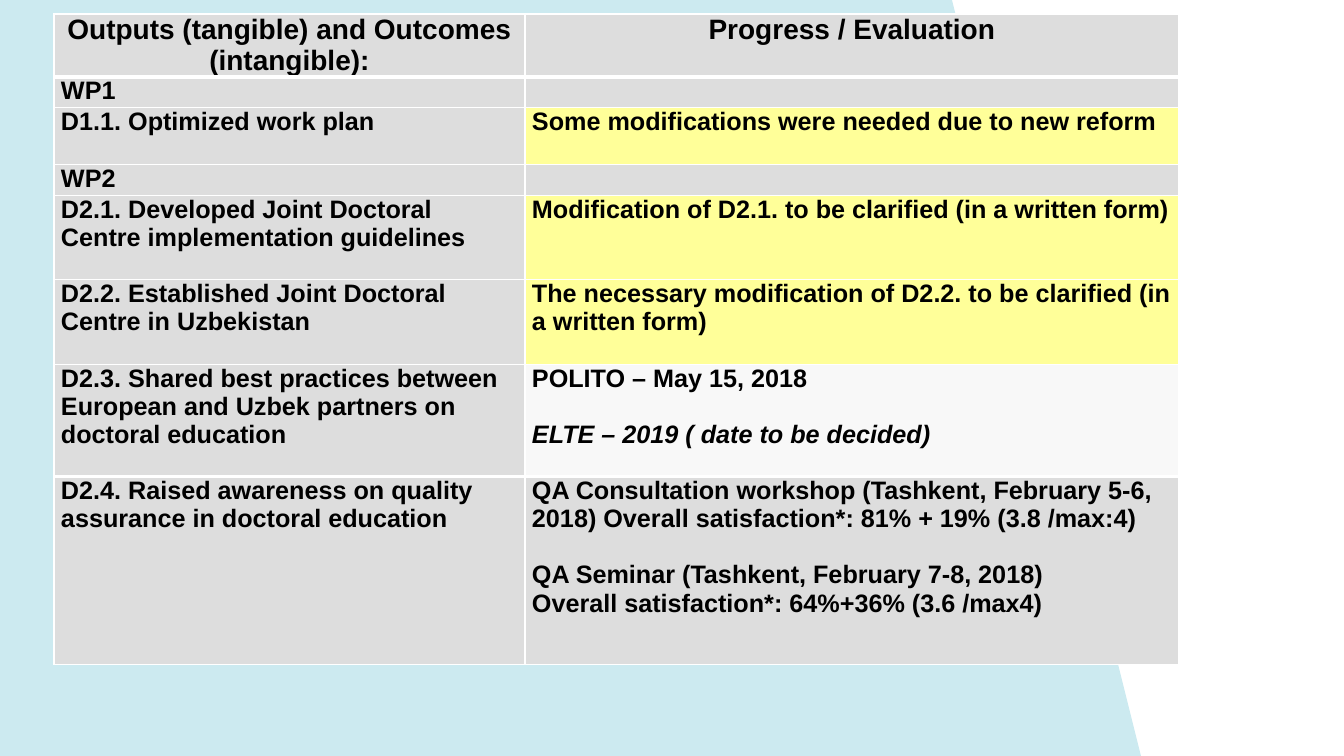
from dataclasses import dataclass

from lxml import etree
from pptx import Presentation
from pptx.dml.color import RGBColor
from pptx.enum.text import PP_ALIGN
from pptx.oxml.ns import qn
from pptx.util import Emu, Pt

PX_PER_INCH = 100.8
EMU_PER_PX = 914400 / PX_PER_INCH
CENTER, LEFT = PP_ALIGN.CENTER, PP_ALIGN.LEFT

BLACK = RGBColor(0x00, 0x00, 0x00)
WHITE = RGBColor(0xFF, 0xFF, 0xFF)
PALE_BLUE = RGBColor(0xCC, 0xEA, 0xF0)
GREY = RGBColor(0xDD, 0xDD, 0xDD)
LIGHT_GREY = RGBColor(0xF8, 0xF8, 0xF8)
YELLOW = RGBColor(0xFF, 0xFF, 0x99)

FONT = "Arial"
BLANK_LAYOUT = 6
COLUMN_WIDTHS = (471, 654)
CELL_INSET = 7
THIN, THICK = 1, 3


@dataclass(frozen=True)
class Line:
    text: str
    italic: bool = False
    space_before: int = 0


@dataclass(frozen=True)
class Row:
    height: int
    output: tuple[Line, ...]
    progress: tuple[Line, ...] = ()
    progress_fill: RGBColor = GREY
    top: int = THIN
    bottom: int = THIN
    size: int = 18
    align: PP_ALIGN = LEFT


ROWS = (
    Row(63, (Line("Outputs (tangible) and Outcomes"), Line("(intangible):")),
        (Line("Progress / Evaluation"),), bottom=THICK, size=20, align=CENTER),
    Row(28, (Line("WP1"),), top=THICK),
    Row(57, (Line("D1.1. Optimized work plan"),),
        (Line("Some modifications were needed due to new reform"),), YELLOW),
    Row(29, (Line("WP2"),)),
    Row(84, (Line("D2.1. Developed Joint Doctoral Centre implementation guidelines"),),
        (Line("Modification of D2.1. to be clarified (in a written form)"),), YELLOW),
    Row(85, (Line("D2.2. Established Joint Doctoral Centre in Uzbekistan"),),
        (Line("The necessary modification of D2.2. to be clarified (in a written form)"),), YELLOW),
    Row(112, (Line("D2.3. Shared best practices between European and Uzbek partners "
                   "on doctoral education"),),
        (Line("POLITO – May 15, 2018"),
         Line("ELTE – 2019 ( date to be decided)", italic=True, space_before=20)),
        LIGHT_GREY, bottom=THICK),
    Row(188, (Line("D2.4. Raised awareness on quality assurance in doctoral education"),),
        (Line("QA Consultation workshop (Tashkent, February 5-6, 2018) "
              "Overall satisfaction*: 81% + 19% (3.8 /max:4)"),
         Line("QA Seminar (Tashkent, February 7-8, 2018)", space_before=20),
         Line("Overall satisfaction*: 64%+36% (3.6 /max4)")), top=THICK),
)


def px(length: int) -> Emu:
    return Emu(round(length * EMU_PER_PX))


def write(p, text: str, *, size: int, italic: bool = False,
          align: PP_ALIGN = LEFT, space_before: int = 0) -> None:
    p.alignment = align
    if space_before:
        p.space_before = Pt(space_before)
    r = p.add_run()
    r.text = text
    font = r.font
    font.name, font.size, font.bold, font.italic = FONT, Pt(size), True, italic
    font.color.rgb = BLACK


def add_borders(cell, top: int, bottom: int) -> None:
    tc_pr = cell._tc.get_or_add_tcPr()
    for side, width in (("L", THIN), ("R", THIN), ("T", top), ("B", bottom)):
        ln = etree.SubElement(tc_pr, qn(f"a:ln{side}"), w=str(Pt(width)))
        fill = etree.SubElement(ln, qn("a:solidFill"))
        etree.SubElement(fill, qn("a:srgbClr"), val=str(WHITE))


def fill_cell(cell, lines: tuple[Line, ...], fill: RGBColor, row: Row) -> None:
    cell.margin_left = cell.margin_right = px(CELL_INSET)
    cell.margin_top = cell.margin_bottom = 0
    add_borders(cell, row.top, row.bottom)
    cell.fill.solid()
    cell.fill.fore_color.rgb = fill
    tf = cell.text_frame
    for i, line in enumerate(lines):
        p = tf.add_paragraph() if i else tf.paragraphs[0]
        write(p, line.text, size=row.size, italic=line.italic,
              align=row.align, space_before=line.space_before)


def add_backdrop(slide) -> None:
    builder = slide.shapes.build_freeform(px(1141), px(756))
    builder.add_line_segments([(px(x), px(y)) for x, y in ((952, 0), (0, 0), (-2, 756))])
    s = builder.convert_to_shape()
    s.shadow.inherit = False
    s.fill.solid()
    s.fill.fore_color.rgb = PALE_BLUE
    s.line.fill.background()


def add_progress_table(slide) -> None:
    height = sum(row.height for row in ROWS)
    table = slide.shapes.add_table(len(ROWS), len(COLUMN_WIDTHS), px(54), px(14),
                                   px(sum(COLUMN_WIDTHS)), px(height)).table
    table.first_row = table.horz_banding = False
    for column, width in zip(table.columns, COLUMN_WIDTHS):
        column.width = px(width)
    for i, row in enumerate(ROWS):
        table.rows[i].height = px(row.height)
        fill_cell(table.cell(i, 0), row.output, GREY, row)
        fill_cell(table.cell(i, 1), row.progress, row.progress_fill, row)


def main() -> None:
    prs = Presentation()
    prs.slide_width, prs.slide_height = px(1344), px(756)
    slide = prs.slides.add_slide(prs.slide_layouts[BLANK_LAYOUT])
    add_backdrop(slide)
    add_progress_table(slide)
    prs.save("out.pptx")


if __name__ == "__main__":
    main()
